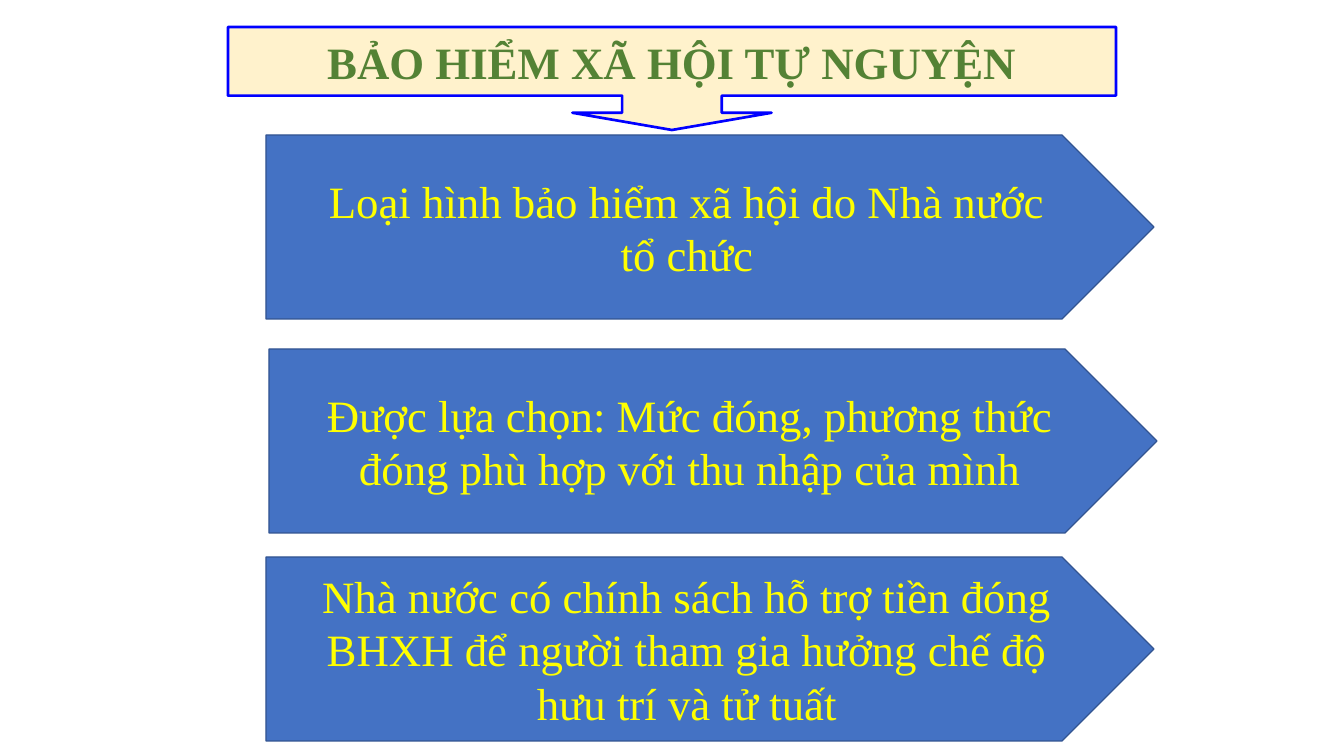
from pptx import Presentation
from pptx.dml.color import RGBColor
from pptx.enum.shapes import MSO_SHAPE
from pptx.enum.text import MSO_ANCHOR, PP_ALIGN
from pptx.util import Emu, Pt

CALLOUT = MSO_SHAPE.DOWN_ARROW_CALLOUT
PENTAGON = MSO_SHAPE.PENTAGON
MIDDLE = MSO_ANCHOR.MIDDLE
CENTER = PP_ALIGN.CENTER

TITLE = ["BẢO HIỂM XÃ HỘI TỰ NGUYỆN"]
POINTS = [
    (266, 135, ["Loại hình bảo hiểm xã hội do Nhà nước", "tổ chức"]),
    (269, 349, ["Được lựa chọn: Mức đóng, phương thức đóng phù hợp với thu nhập của mình"]),
    (266, 557, ["Nhà nước có chính sách hỗ trợ tiền đóng BHXH để người tham gia hưởng chế độ",
                "hưu trí và tử tuất"]),
]
WIDTH, TITLE_HEIGHT, POINT_HEIGHT = 888, 103, 184
INSET = 12
CALLOUT_ADJUSTMENTS = [0.967, 0.967, 0.167, 0.667]
TITLE_STYLE = {"fill": "FFF2CC", "line": "0000FF", "weight": 2, "wrap": False,
               "text": "548235", "bold": True}
POINT_STYLE = {"fill": "4472C4", "line": "325491", "weight": 1, "wrap": True,
               "text": "FFFF00", "bold": False}


def px(n):
    return Emu(round(n * 914400 / 95.5))


def color(value):
    return RGBColor.from_string(value)


def add_block(s, kind, box, lines, style):
    sp = s.shapes.add_shape(kind, *map(px, box))
    sp.shadow.inherit = False
    sp.fill.solid()
    sp.fill.fore_color.rgb = color(style["fill"])
    sp.line.color.rgb = color(style["line"])
    sp.line.width = Pt(style["weight"])
    tf = sp.text_frame
    frame = {"word_wrap": style["wrap"], "vertical_anchor": MIDDLE,
             "margin_left": px(INSET), "margin_right": px(INSET)}
    for name, value in frame.items():
        setattr(tf, name, value)
    font = {"name": "Times New Roman", "size": Pt(33.8), "bold": style["bold"]}
    for i, line in enumerate(lines):
        p = tf.add_paragraph() if i else tf.paragraphs[0]
        p.alignment = CENTER
        r = p.add_run()
        r.text = line
        r.font.color.rgb = color(style["text"])
        for name, value in font.items():
            setattr(r.font, name, value)
    return sp


def main():
    prs = Presentation()
    prs.slide_width, prs.slide_height = px(1344), px(756)
    s = prs.slides.add_slide(prs.slide_layouts[6])
    title = add_block(s, CALLOUT, (228, 27, WIDTH, TITLE_HEIGHT), TITLE, TITLE_STYLE)
    for i, value in enumerate(CALLOUT_ADJUSTMENTS):
        title.adjustments[i] = value
    for x, y, lines in POINTS:
        add_block(s, PENTAGON, (x, y, WIDTH, POINT_HEIGHT), lines, POINT_STYLE)
    prs.save("out.pptx")


if __name__ == "__main__":
    main()
